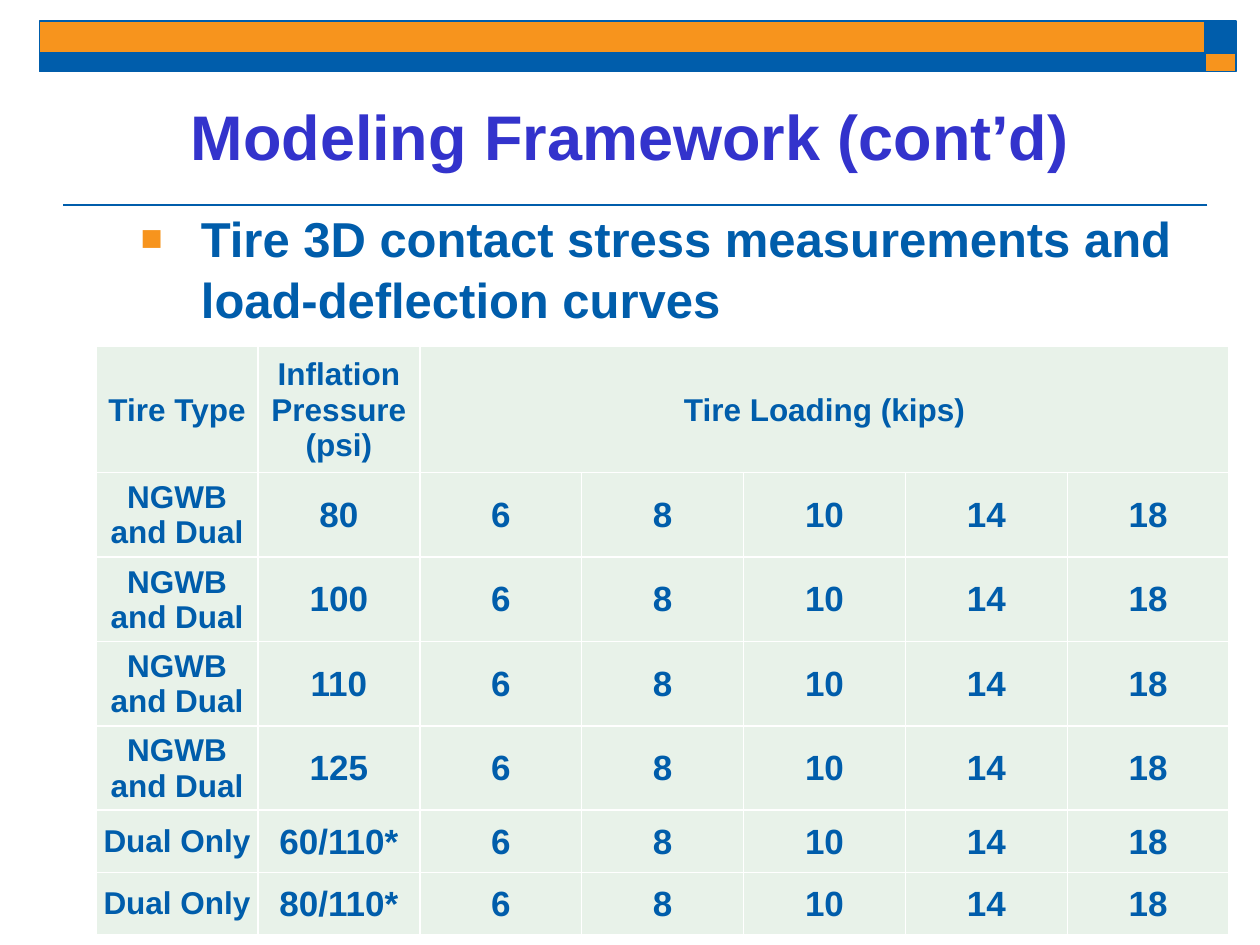
"""Build the tire modeling slide with its loading table."""
import pptx
import pptx.util
import pptx.dml.color
import pptx.enum.shapes
import pptx.enum.text
import pptx.oxml
import pptx.oxml.ns
from lxml import etree

Pt = pptx.util.Pt
RGB = pptx.dml.color.RGBColor.from_string
MID = pptx.enum.text.MSO_ANCHOR.MIDDLE
MSO = pptx.enum.shapes
ALIGN = pptx.enum.text.PP_ALIGN
qn = pptx.oxml.ns.qn

theme = {
    "font": "Arial",
    "blue": "005DAB", "gold": "F7941D", "title": "3333CC",
    "cell": "E8F2E9", "rule": "FFFFFF",
    "head": 36, "body": 28, "label": 18, "value": 20,
}


def style(par, size, color, align):
    par.alignment = align
    for run in par.runs:
        run.font.name = theme["font"]
        run.font.size = Pt(theme[size])
        run.font.bold = True
        run.font.color.rgb = RGB(theme[color])


def edge(cell):
    props = cell._tc.get_or_add_tcPr()
    for spot, side in enumerate(("lnL", "lnR", "lnT", "lnB")):
        line = etree.Element(qn("a:" + side), w=str(Pt(1)))
        fill = etree.SubElement(line, qn("a:solidFill"))
        etree.SubElement(fill, qn("a:srgbClr"), val=theme["rule"])
        props.insert(spot, line)


deck = pptx.Presentation()
deck.slide_width, deck.slide_height = Pt(720), Pt(540)
slide = deck.slides.add_slide(deck.slide_layouts[5])
shapes = slide.shapes

rule = shapes.add_connector(MSO.MSO_CONNECTOR.STRAIGHT, Pt(690), Pt(117), Pt(36), Pt(117))
rule.line.color.rgb = RGB(theme["blue"])
rule.line.width = Pt(1)
etree.SubElement(rule._element.spPr, qn("a:effectLst"))

bars = [
    (688.5, 12, 18, 18.5, "blue"),
    (22.5, 12, 666, 18.5, "gold"),
    (22.5, 30.5, 666, 10.5, "blue"),
    (688.5, 30.5, 18, 10.5, "gold"),
]
for left, top, width, height, color in bars:
    bar = shapes.add_shape(MSO.MSO_SHAPE.RECTANGLE, Pt(left), Pt(top), Pt(width), Pt(height))
    bar.shadow.inherit = False
    bar.fill.solid()
    bar.fill.fore_color.rgb = RGB(theme[color])
    bar.line.color.rgb = RGB(theme["blue"])
    bar.line.width = Pt(1)

title = shapes.title
title.left, title.top, title.width, title.height = Pt(36), Pt(42), Pt(648), Pt(70.5)
title.text_frame.text = "Modeling Framework (cont’d)"
title.text_frame.vertical_anchor = MID
style(title.text_frame.paragraphs[0], "head", "title", ALIGN.CENTER)

loads = ["6", "8", "10", "14", "18"]
tests = [("NGWB and Dual", psi) for psi in ("80", "100", "110", "125")]
tests += [("Dual Only", psi) for psi in ("60/110*", "80/110*")]
rows = [["Tire Type", "Inflation Pressure (psi)", "Tire Loading (kips)"] + [""] * 4]
rows += [[kind, psi] + loads for kind, psi in tests]
heights = [72] + [48.25] * 4 + [35.5] * 2

table = shapes.add_table(len(rows), 7, Pt(54.9), Pt(198), Pt(647.5), Pt(sum(heights))).table
for col in table.columns:
    col.width = Pt(92.5)
for r, row in enumerate(rows):
    table.rows[r].height = Pt(heights[r])
    for c, text in enumerate(row):
        cell = table.cell(r, c)
        cell.text_frame.text = text
        cell.vertical_anchor = MID
        cell.margin_left = cell.margin_right = cell.margin_top = Pt(0.75)
        cell.margin_bottom = 0
        cell.fill.solid()
        cell.fill.fore_color.rgb = RGB(theme["cell"])
        edge(cell)
        size = "label" if r == 0 or c == 0 else "value"
        style(cell.text_frame.paragraphs[0], size, "blue", ALIGN.CENTER)
table.cell(0, 2).merge(table.cell(0, 6))

box = shapes.add_textbox(Pt(36.5), Pt(113.75), Pt(648), Pt(51))
box.text_frame.word_wrap = True
point = box.text_frame.paragraphs[0]
point.text = "Tire 3D contact stress measurements and load-deflection curves"
point.level = 1
point.line_spacing = 1.05
props = point._p.get_or_add_pPr()
props.set("marL", str(Pt(71.25)))
props.set("indent", str(Pt(-34.5)))
tint = etree.SubElement(props, qn("a:buClr"))
etree.SubElement(tint, qn("a:srgbClr"), val=theme["gold"])
etree.SubElement(props, qn("a:buSzPct"), val="75000")
etree.SubElement(props, qn("a:buFont"), typeface=theme["font"])
etree.SubElement(props, qn("a:buChar"), char="■")
style(point, "body", "blue", ALIGN.LEFT)

deck.save("out.pptx")
